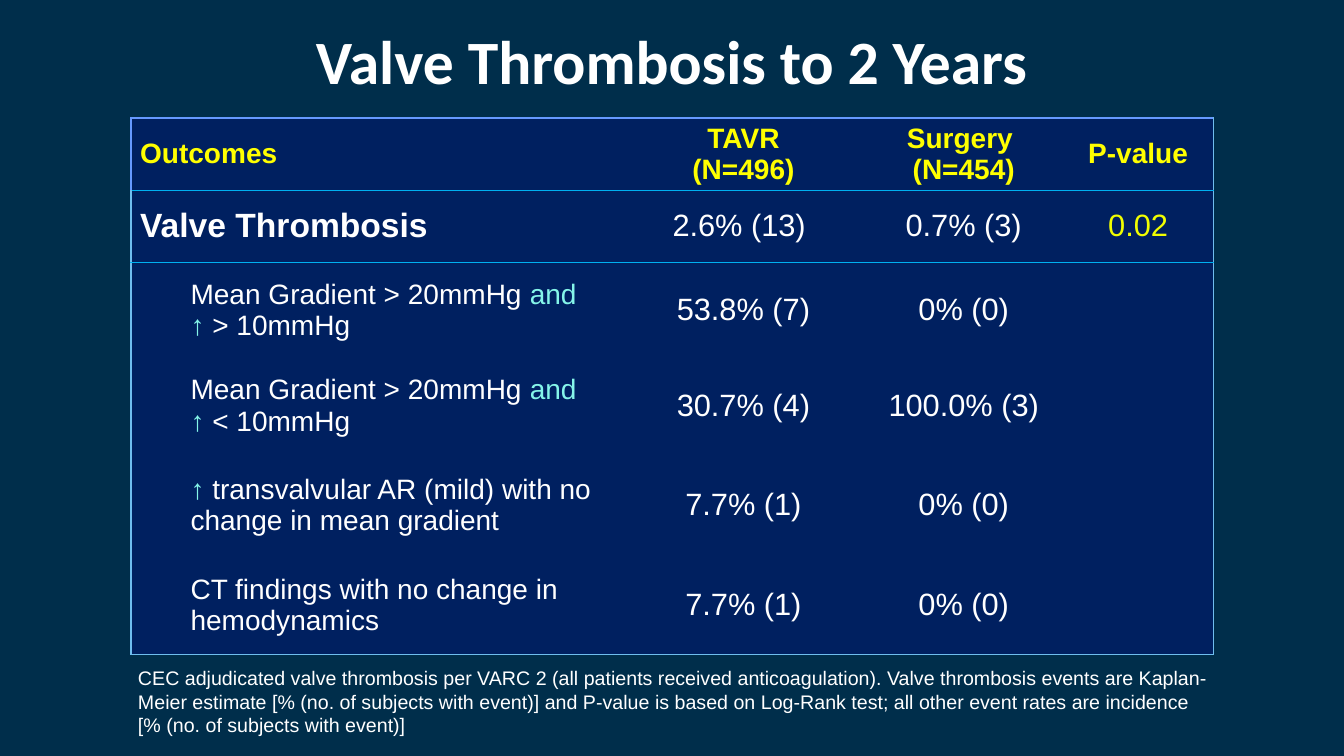
from dataclasses import dataclass

from lxml import etree
from pptx import Presentation
from pptx.dml.color import RGBColor
from pptx.enum.text import MSO_ANCHOR, PP_ALIGN
from pptx.oxml.ns import qn
from pptx.util import Emu, Inches, Pt

MIDDLE = MSO_ANCHOR.MIDDLE
LEFT, CENTER = PP_ALIGN.LEFT, PP_ALIGN.CENTER
WIDE, HIGH = Inches(13.33), Inches(7.5)
INK = {
    "back": "002E4B", "cell": "002060", "white": "FFFFFF", "head": "FFFF00",
    "alert": "F1FE00", "teal": "85F5E9", "top": "6699FF", "rule": "00B0F0",
    "edge": "6FBDEE",
}
COLS = (36.53, 18.08, 14.7, 11.25)
ROWS = (9.6, 9.47, 12.67, 12.67, 13.6, 12.93)


@dataclass(frozen=True)
class Span:
    """A stretch of text in one colour, with an optional break before it."""
    text: str
    ink: str = "white"
    fresh: bool = False


@dataclass(frozen=True)
class Style:
    """Type settings of a block of text."""
    size: float
    bold: bool = False
    align: PP_ALIGN = CENTER
    font: str = "Arial"


@dataclass(frozen=True)
class Line:
    """A table row: its label, its values and their styles."""
    label: tuple[Span, ...]
    vals: tuple[tuple[Span, ...], ...]
    first: Style
    rest: Style
    dent: float = 0.68


VALUE = Style(22)
HEAD = Style(20, True)
ITEM = Style(20, align=LEFT)


def item(label: tuple[Span, ...], tavr: str, surg: str) -> Line:
    """Return an indented row without a P-value."""
    return Line(label, ((Span(tavr),), (Span(surg),), ()), ITEM, VALUE, 4.43)


def mean(sign: str) -> tuple[Span, ...]:
    """Return the label of a mean gradient row."""
    return (Span("Mean Gradient > 20mmHg "), Span("and", "teal"),
            Span("↑", "teal", True), Span(f" {sign} 10mmHg"))


def group(name: str, count: str) -> tuple[Span, ...]:
    """Return a two-line column heading."""
    return Span(name, "head"), Span(count, "head", True)


LINES = (
    Line((Span("Outcomes", "head"),),
         (group("TAVR", "(N=496)"), group("Surgery ", "(N=454)"),
          (Span("P-value", "head"),)),
         Style(20, True, LEFT), HEAD),
    Line((Span("Valve Thrombosis"),),
         ((Span("2.6% (13) "),), (Span("0.7% (3)"),), (Span("0.02", "alert"),)),
         Style(24, True, LEFT), VALUE),
    item(mean(">"), "53.8% (7)", "0% (0)"),
    item(mean("<"), "30.7% (4)", "100.0% (3)"),
    item((Span("↑", "teal"),
          Span(" transvalvular AR (mild) with no change in mean gradient")),
         "7.7% (1)", "0% (0)"),
    item((Span("CT findings with no change in hemodynamics"),),
         "7.7% (1)", "0% (0)"),
)
NOTE = (
    Span("CEC adjudicated valve thrombosis per VARC 2 (all patients received "
         "anticoagulation). Valve thrombosis events are Kaplan-Meier estimate "
         "[% (no. of subjects with event)] and P-value is based on Log-Rank "
         "test; all other event rates are incidence "),
    Span("[% (no. of subjects with event)]", fresh=True),
)


def across(part: float) -> Emu:
    """Return a percentage of the slide's width."""
    return Emu(round(WIDE * part / 100))


def down(part: float) -> Emu:
    """Return a percentage of the slide's height."""
    return Emu(round(HIGH * part / 100))


def write(frame, spans: tuple[Span, ...], style: Style) -> None:
    """Fill a text frame with coloured spans."""
    para = frame.paragraphs[0]
    para.alignment = style.align
    for span in spans:
        if span.fresh:
            para.add_line_break()
        run = para.add_run()
        run.text = span.text
        run.font.size = Pt(style.size)
        run.font.bold = style.bold
        run.font.name = style.font
        run.font.color.rgb = RGBColor.from_string(INK[span.ink])


def border(cell, side: str, ink: str) -> None:
    """Draw one side of a cell, or clear it when no colour is named."""
    line = etree.SubElement(cell._tc.get_or_add_tcPr(), qn(f"a:ln{side}"),
                            w=str(Pt(1)))
    if ink:
        fill = etree.SubElement(line, qn("a:solidFill"))
        etree.SubElement(fill, qn("a:srgbClr"), val=INK[ink])
    else:
        etree.SubElement(line, qn("a:noFill"))


def edges(row: int, col: int) -> dict[str, str]:
    """Return the border colour of each side of a cell."""
    last = len(ROWS) - 1
    return {
        "L": ("edge" if row else "top") if col == 0 else "",
        "R": "edge" if col == len(COLS) - 1 else "",
        "T": {0: "top", 1: "rule", 2: "rule"}.get(row, ""),
        "B": {0: "rule", 1: "rule", last: "edge"}.get(row, ""),
    }


def chart(slide) -> None:
    """Build the outcomes table."""
    grid = slide.shapes.add_table(
        len(ROWS), len(COLS), across(9.75), down(15.6),
        across(sum(COLS)), down(sum(ROWS))).table
    grid.first_row = grid.horz_banding = False
    for col, part in zip(grid.columns, COLS):
        col.width = across(part)
    for row, part in zip(grid.rows, ROWS):
        row.height = down(part)
    for r, line in enumerate(LINES):
        for c, spans in enumerate((line.label, *line.vals)):
            cell = grid.cell(r, c)
            for side, ink in edges(r, c).items():
                border(cell, side, ink)
            cell.fill.solid()
            cell.fill.fore_color.rgb = RGBColor.from_string(INK["cell"])
            cell.vertical_anchor = MIDDLE
            cell.margin_left = across(0.68 if c else line.dent)
            cell.margin_right = across(0.68)
            write(cell.text_frame, spans, line.rest if c else line.first)


def block(slide, box: tuple[float, float, float, float],
          spans: tuple[Span, ...], style: Style):
    """Add a wrapped text box placed by shares of the slide."""
    left, top, wide, high = box
    frame = slide.shapes.add_textbox(
        across(left), down(top), across(wide), down(high)).text_frame
    frame.word_wrap = True
    write(frame, spans, style)
    return frame


def main() -> None:
    """Build and save the slide."""
    deck = Presentation()
    deck.slide_width, deck.slide_height = WIDE, HIGH
    slide = deck.slides.add_slide(deck.slide_layouts[6])
    back = slide.background.fill
    back.solid()
    back.fore_color.rgb = RGBColor.from_string(INK["back"])
    chart(slide)
    block(slide, (9.53, 87.47, 82.9, 10.8), NOTE, Style(14, align=LEFT))
    title = block(slide, (0, 2.4, 100, 11.07),
                  (Span("Valve Thrombosis to 2 Years"),),
                  Style(44, True, font="Calibri"))
    title.vertical_anchor = MIDDLE
    deck.save("out.pptx")


if __name__ == "__main__":
    main()
